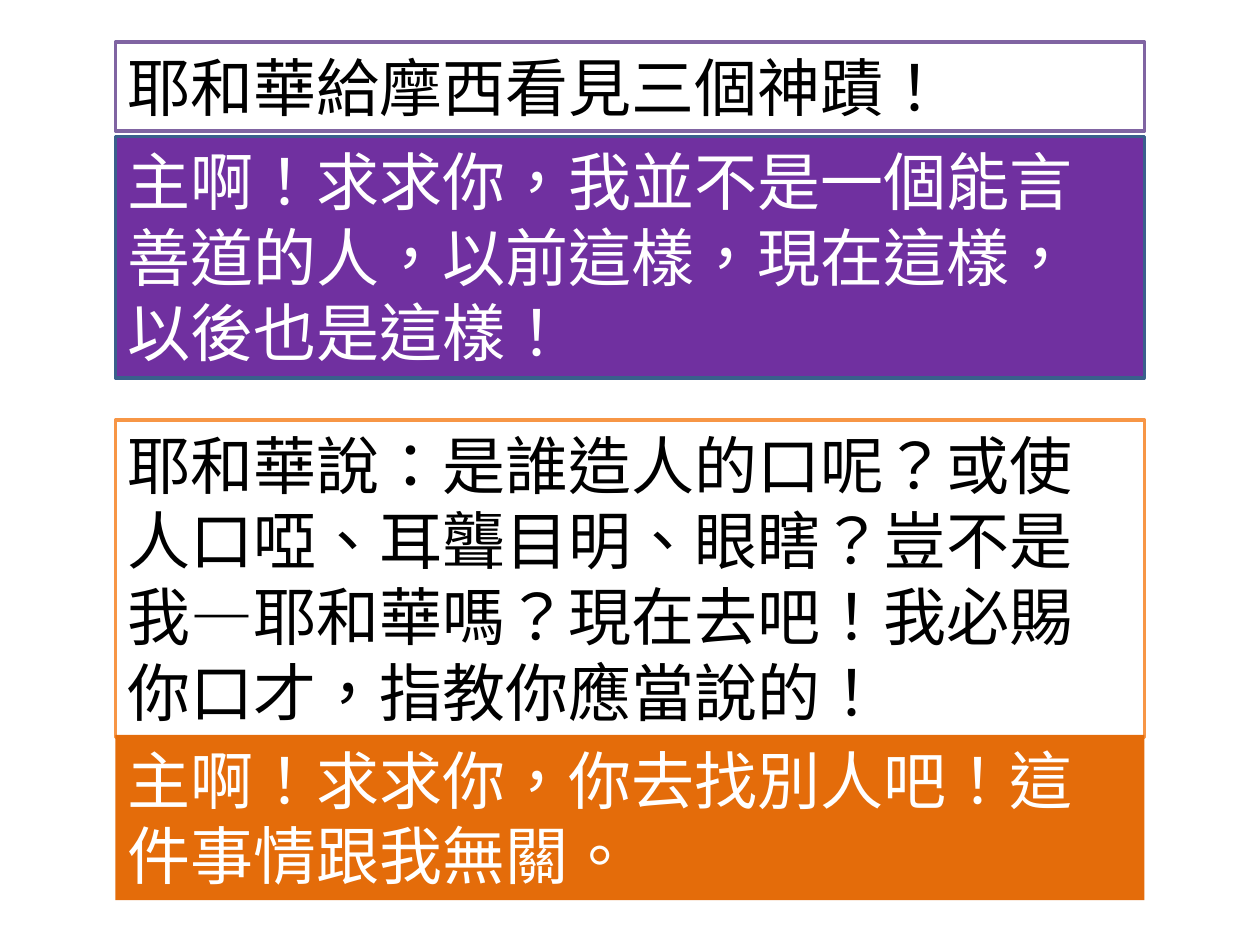
from lxml.etree import SubElement
from pptx import Presentation
from pptx.dml.color import RGBColor
from pptx.enum.lang import MSO_LANGUAGE_ID
from pptx.enum.shapes import MSO_SHAPE
from pptx.enum.text import MSO_ANCHOR, MSO_AUTO_SIZE, PP_ALIGN
from pptx.oxml.ns import qn
from pptx.util import Pt

WHITE = RGBColor(0xFF, 0xFF, 0xFF)
BLACK = RGBColor(0x00, 0x00, 0x00)
LAVENDER = RGBColor(0x80, 0x64, 0xA2)
PURPLE = RGBColor(0x70, 0x30, 0xA0)
BLUE = RGBColor(0x3A, 0x5F, 0x8C)
LIGHT_ORANGE = RGBColor(0xF7, 0x96, 0x46)
ORANGE = RGBColor(0xE4, 0x6C, 0x0A)

FONT = "Noto Sans CJK TC"
BOX_WIDTH = 588

# Height of each box, from its number of text lines
LINE_HEIGHT = 43.5
PADDING = 7.4


def write_text(shape, text, *, color, size=36, font=FONT):
    frame = shape.text_frame
    frame.word_wrap = True
    frame.auto_size = MSO_AUTO_SIZE.SHAPE_TO_FIT_TEXT
    frame.vertical_anchor = MSO_ANCHOR.TOP
    paragraph = frame.paragraphs[0]
    paragraph.alignment = PP_ALIGN.LEFT
    run = paragraph.add_run()
    run.text = text
    run.font.size = Pt(size)
    run.font.color.rgb = color
    run.font.name = font
    run.font.language_id = MSO_LANGUAGE_ID.TRADITIONAL_CHINESE
    # East Asian typeface
    SubElement(run.font._element, qn("a:ea"), typeface=font)


def add_speech(slide, left, top, text, *, lines, fill, line, color):
    height = lines * LINE_HEIGHT + PADDING
    shape = slide.shapes.add_shape(
        MSO_SHAPE.RECTANGLE, Pt(left), Pt(top), Pt(BOX_WIDTH), Pt(height))
    shape.shadow.inherit = False
    shape.fill.solid()
    shape.fill.fore_color.rgb = fill
    if line is None:
        shape.line.fill.background()
    else:
        shape.line.color.rgb = line
        shape.line.width = Pt(2)
    write_text(shape, text, color=color)


def add_calling(slide, left, top):
    # The sign, and the first excuse
    add_speech(slide, left, top, "耶和華給摩西看見三個神蹟！",
               lines=1, fill=WHITE, line=LAVENDER, color=BLACK)
    add_speech(slide, left, top + 54,
               "主啊！求求你，我並不是一個能言善道的人，以前這樣，現在這樣，以後也是這樣！",
               lines=3, fill=PURPLE, line=BLUE, color=WHITE)


def add_answer(slide, left, top):
    # The answer, and the last excuse
    add_speech(slide, left, top,
               "耶和華說：是誰造人的口呢？或使人口啞、耳聾目明、眼瞎？豈不是"
               "我—耶和華嗎？現在去吧！我必賜你口才，指教你應當說的！",
               lines=4, fill=WHITE, line=LIGHT_ORANGE, color=BLACK)
    add_speech(slide, left, top + 180,
               "主啊！求求你，你去找別人吧！這件事情跟我無關。",
               lines=2, fill=ORANGE, line=None, color=WHITE)


def main():
    presentation = Presentation()
    presentation.slide_width = Pt(720)
    presentation.slide_height = Pt(540)
    slide = presentation.slides.add_slide(presentation.slide_layouts[6])
    add_calling(slide, 66, 24)
    add_answer(slide, 66, 240)
    presentation.save("out.pptx")


if __name__ == "__main__":
    main()
